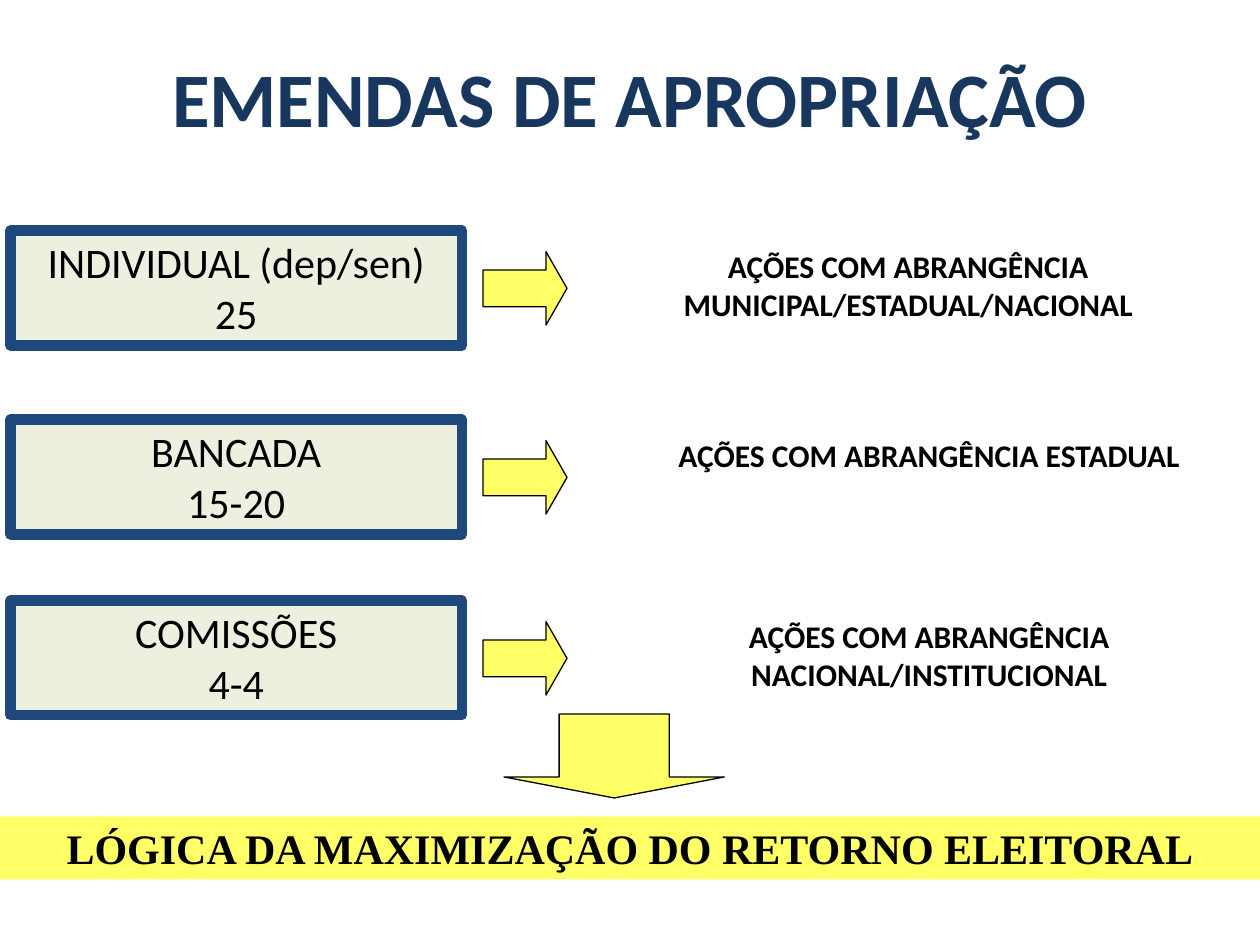
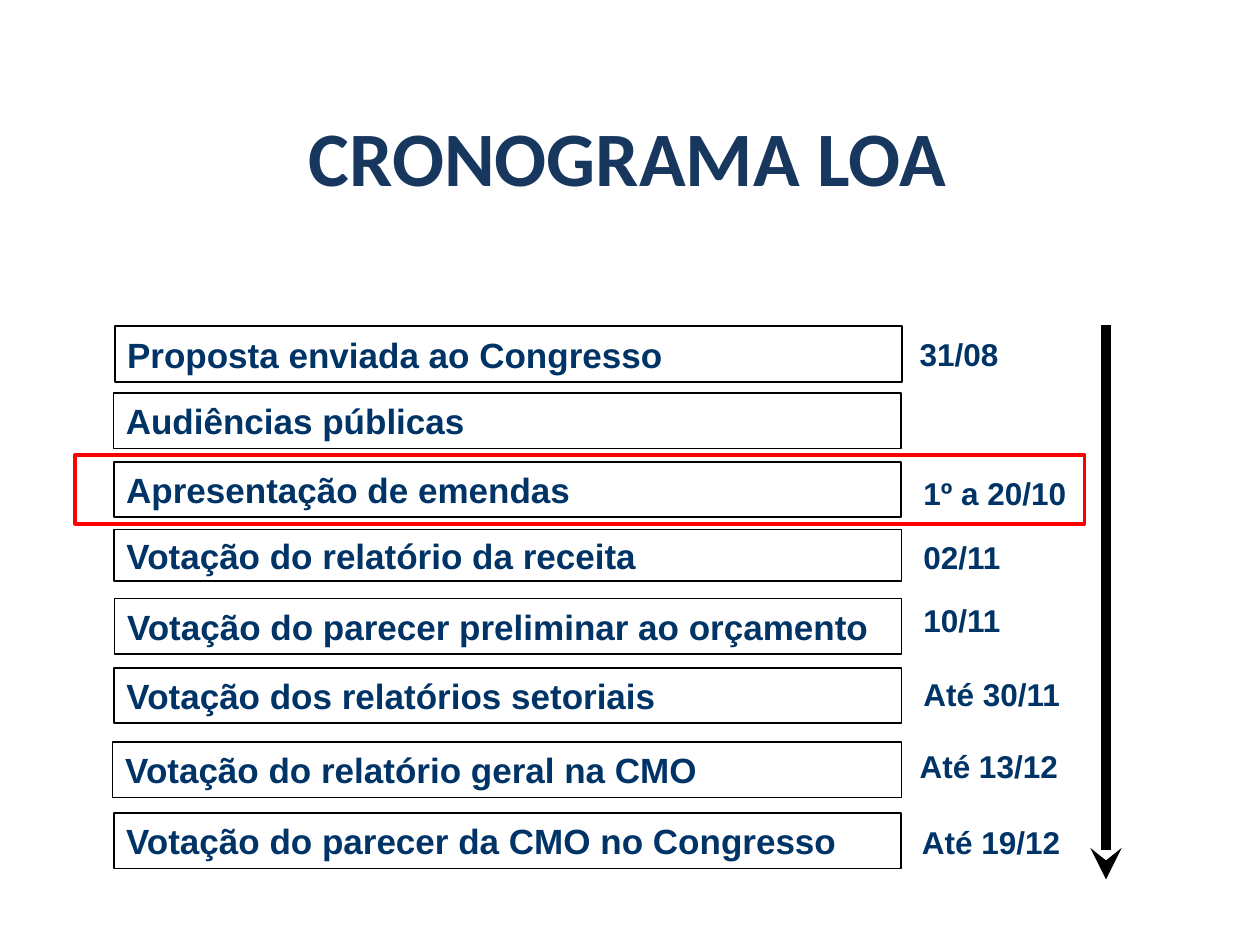
from dataclasses import dataclass
from typing import Any, Optional

import pptx
import pptx.dml.color
import pptx.enum.shapes
import pptx.enum.text
import pptx.oxml
import pptx.oxml.ns
import pptx.util
from lxml import etree

Pt = pptx.util.Pt
SHAPE = pptx.enum.shapes.MSO_SHAPE
ALIGN = pptx.enum.text.PP_ALIGN
ANCHOR = pptx.enum.text.MSO_ANCHOR

BLACK, WHITE, RED = "000000", "FFFFFF", "FF0000"
TITLE_BLUE, FRAME_BLUE, TEXT_BLUE = "17375E", "1F497D", "003366"
YELLOW, PALE_GREEN = "FFFF66", "EBF1DE"

TITLE = {"name": "Calibri", "size": Pt(44), "bold": True, "color": TITLE_BLUE}
AMENDMENT = {"name": "Calibri", "size": Pt(24), "bold": False, "color": BLACK}
SCOPE = {"name": "Calibri", "size": Pt(18), "bold": True, "color": BLACK}
CONCLUSION = {"name": "Times New Roman", "size": Pt(24), "bold": True, "color": BLACK}
STEP = {"name": "Arial", "size": Pt(20), "bold": True, "color": TEXT_BLUE}
DATE = {**STEP, "size": Pt(18)}


@dataclass(frozen=True)
class Box:
    left: float
    top: float
    width: float
    height: float

    def lengths(self) -> list[int]:
        return [Pt(value) for value in (self.left, self.top, self.width, self.height)]


@dataclass(frozen=True)
class Amendment:
    top: float
    label: str
    scope: str
    scope_left: float = 354


@dataclass(frozen=True)
class Step:
    left: float
    top: float
    label: str
    date: str = ""
    date_left: float = 520.6
    date_top: float = 0
    width: float = 450
    height: float = 31.7
    line_width: float = 1


AMENDMENTS = (
    Amendment(131.8, "INDIVIDUAL (dep/sen)\n25",
              "AÇÕES COM ABRANGÊNCIA MUNICIPAL/ESTADUAL/NACIONAL", 342),
    Amendment(239.8, "BANCADA\n15-20", "AÇÕES COM ABRANGÊNCIA ESTADUAL"),
    Amendment(343.2, "COMISSÕES\n4-4", "AÇÕES COM ABRANGÊNCIA NACIONAL/INSTITUCIONAL"),
)

STEPS = (
    Step(65.5, 186.5, "Proposta enviada ao Congresso", "31/08", 518.4, 187.9),
    Step(64.8, 224.6, "Audiências públicas"),
    Step(65, 264, "Apresentação de emendas", "1º a 20/10", date_top=267.1),
    Step(65.2, 302.6, "Votação do relatório da receita", "02/11",
         date_top=303.8, height=29.5),
    Step(65.5, 342, "Votação do parecer preliminar ao orçamento", "10/11",
         date_top=339.8, width=449.6, line_width=0.75),
    Step(65.2, 381.6, "Votação dos relatórios setoriais", "Até 30/11", date_top=382.3),
    Step(64.5, 424, "Votação do relatório geral na CMO", "Até 13/12", 518.4, 423.4,
         width=450.7, line_width=0.75),
    Step(65, 464.6, "Votação do parecer da CMO no Congresso", "Até 19/12", 519.8, 466.6),
)


def color(value: str) -> pptx.dml.color.RGBColor:
    return pptx.dml.color.RGBColor.from_string(value)


def write(shape: Any, text: str, font: dict, align: Any = ALIGN.CENTER,
          anchor: Any = ANCHOR.TOP, line_spacing: Optional[float] = None) -> None:
    """Fill a shape with text, one paragraph for each line."""
    frame = shape.text_frame
    frame.word_wrap = True
    frame.vertical_anchor = anchor
    frame.text = text
    for paragraph in frame.paragraphs:
        paragraph.alignment = align
        paragraph.line_spacing = line_spacing
        run_font = paragraph.runs[0].font
        for name, value in font.items():
            if name == "color":
                run_font.color.rgb = color(value)
            else:
                setattr(run_font, name, value)


def add_text(shapes: Any, box: Box, text: str, font: dict, **layout: Any) -> None:
    write(shapes.add_textbox(*box.lengths()), text, font, **layout)


def add_shape(shapes: Any, kind: Any, box: Box, fill: Optional[str] = None,
              line: Optional[str] = None, line_width: float = 0.75) -> Any:
    shape = shapes.add_shape(kind, *box.lengths())
    shape.shadow.inherit = False
    if fill:
        shape.fill.solid()
        shape.fill.fore_color.rgb = color(fill)
    else:
        shape.fill.background()
    if line:
        shape.line.color.rgb = color(line)
        shape.line.width = Pt(line_width)
    else:
        shape.line.fill.background()
    return shape


def add_block_arrow(shapes: Any, kind: Any, box: Box, head: float) -> None:
    arrow = add_shape(shapes, kind, box, YELLOW, BLACK)
    arrow.adjustments[0] = 0.5
    arrow.adjustments[1] = head


def add_title(slide: Any, box: Box, text: str, anchor: Any) -> None:
    add_text(slide.shapes, box, text, TITLE, anchor=anchor, line_spacing=1.3)


def add_time_arrow(slide: Any, x: float, top: float, bottom: float) -> None:
    arrow = slide.shapes.add_connector(
        pptx.enum.shapes.MSO_CONNECTOR.STRAIGHT, Pt(x), Pt(top), Pt(x), Pt(bottom))
    arrow.line.color.rgb = color(BLACK)
    arrow.line.width = Pt(6)
    qualified = pptx.oxml.ns.qn
    etree.SubElement(arrow.line._get_or_add_ln(), qualified("a:tailEnd"), type="stealth")
    etree.SubElement(arrow._element.spPr, qualified("a:effectLst"))


def add_amendment(slide: Any, row: Amendment) -> None:
    shapes = slide.shapes.add_group_shape().shapes
    label = add_shape(shapes, SHAPE.RECTANGLE, Box(6, row.top, 258, 65.5),
                      PALE_GREEN, FRAME_BLUE, 6)
    write(label, row.label, AMENDMENT)
    add_text(shapes, Box(row.scope_left, row.top + 5.8, 354, 50.4), row.scope, SCOPE)
    add_block_arrow(shapes, SHAPE.RIGHT_ARROW, Box(276, row.top + 12, 48, 42), 0.286)


def add_step(slide: Any, step: Step) -> None:
    label = add_shape(slide.shapes, SHAPE.RECTANGLE,
                      Box(step.left, step.top, step.width, step.height),
                      WHITE, BLACK, step.line_width)
    write(label, step.label, STEP, ALIGN.LEFT, ANCHOR.MIDDLE)
    if step.date:
        add_text(slide.shapes, Box(step.date_left, step.date_top, 100, 28.8),
                 step.date, DATE, align=ALIGN.LEFT)


def build_amendments_slide(slide: Any) -> None:
    add_title(slide, Box(6, 21, 708, 53), "EMENDAS DE APROPRIAÇÃO", ANCHOR.MIDDLE)
    for row in AMENDMENTS:
        add_amendment(slide, row)
    band = add_shape(slide.shapes, SHAPE.RECTANGLE, Box(0, 466.5, 720, 36), YELLOW)
    write(band, "LÓGICA DA MAXIMIZAÇÃO DO RETORNO ELEITORAL", CONCLUSION)
    add_block_arrow(slide.shapes, SHAPE.DOWN_ARROW, Box(288, 408, 126, 48), 0.25)


def build_schedule_slide(slide: Any) -> None:
    add_time_arrow(slide, 632, 186, 502.5)
    add_title(slide, Box(36.5, 43, 644.5, 76.5), "CRONOGRAMA LOA", ANCHOR.TOP)
    for step in STEPS:
        add_step(slide, step)
    add_shape(slide.shapes, SHAPE.RECTANGLE, Box(43, 260, 576.7, 39.5),
              line=RED, line_width=2)


def main() -> None:
    presentation = pptx.Presentation()
    presentation.slide_width, presentation.slide_height = Pt(720), Pt(540)
    blank = presentation.slide_layouts[6]
    for build in (build_amendments_slide, build_schedule_slide):
        build(presentation.slides.add_slide(blank))
    presentation.save("out.pptx")


if __name__ == "__main__":
    main()
